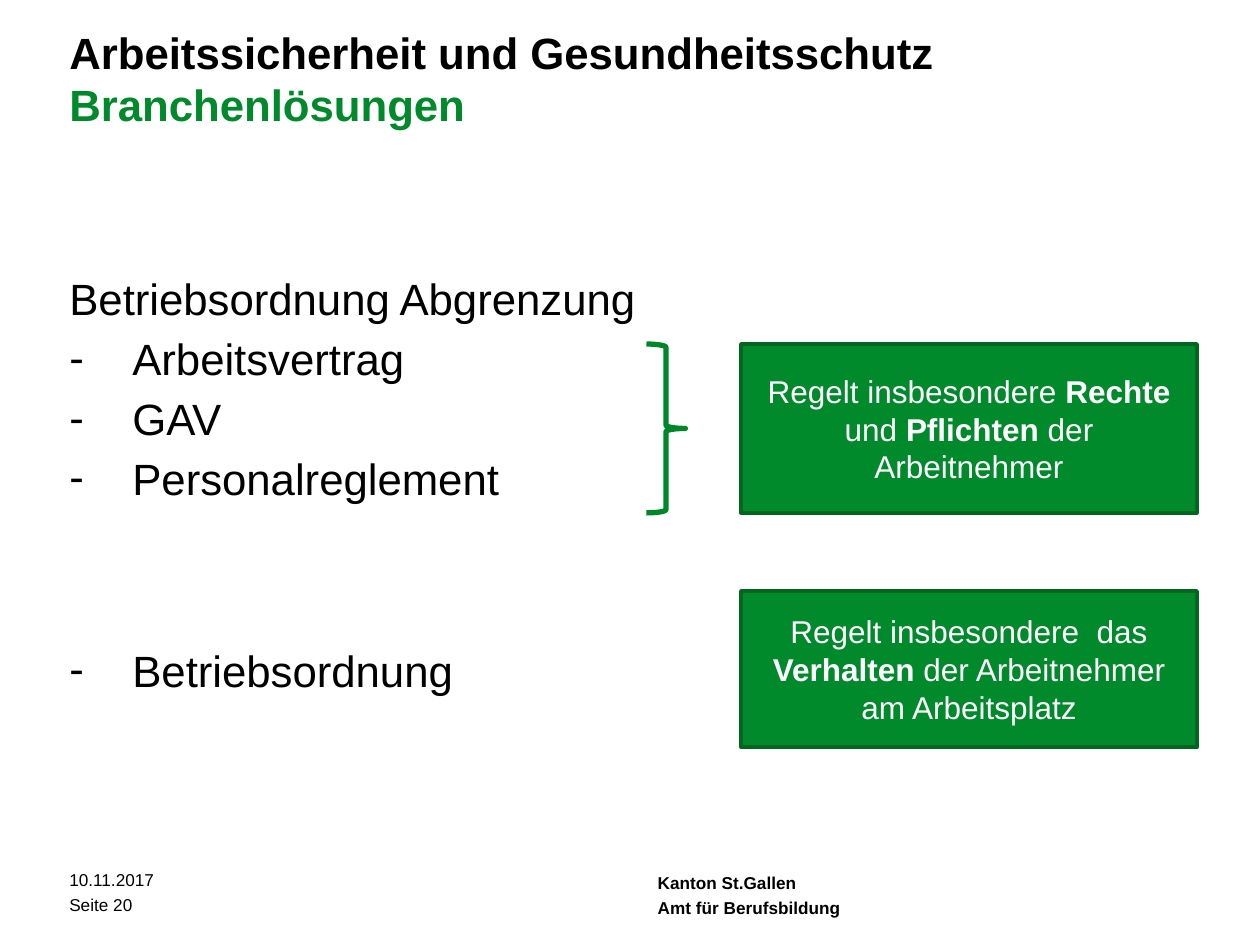
from pptx import Presentation
from pptx.util import Pt
from pptx.dml.color import RGBColor
from pptx.enum.shapes import MSO_SHAPE
from pptx.enum.text import MSO_ANCHOR, PP_ALIGN
from pptx.oxml.ns import qn
from lxml.etree import SubElement

COLORS = {"black": "000000", "white": "FFFFFF", "green": "008A2B",
          "brace": "00872A", "edge": "006620"}
FONT = "Arial"


def color(name):
    return RGBColor.from_string(COLORS[name])


def style(font, size, tone="black", bold=False):
    font.name = FONT
    font.size = Pt(size)
    font.bold = bold
    font.color.rgb = color(tone)


def add_text(slide, left, top, width, height):
    box = slide.shapes.add_textbox(Pt(left), Pt(top), Pt(width), Pt(height))
    frame = box.text_frame
    frame.word_wrap = True
    frame.margin_left = frame.margin_right = 0
    frame.margin_top = frame.margin_bottom = 0
    return frame


def add_title(slide, left, top, width, height):
    frame = add_text(slide, left, top, width, height)
    frame.text = "Arbeitssicherheit und Gesundheitsschutz\nBranchenlösungen"
    for para, tone in zip(frame.paragraphs, ("black", "green")):
        para.line_spacing = Pt(30)
        style(para.runs[0].font, 25, tone, True)


def add_dash(para, indent):
    props = para._p.get_or_add_pPr()
    props.set("marL", str(Pt(indent)))
    props.set("indent", str(-Pt(indent)))
    SubElement(props, qn("a:buFont")).set("typeface", FONT)
    SubElement(props, qn("a:buChar")).set("char", "-")


def add_list(slide, left, top, width, height):
    frame = add_text(slide, left, top, width, height)
    frame.text = "\n".join(("Betriebsordnung Abgrenzung", "Arbeitsvertrag", "GAV",
                            "Personalreglement", "Betriebsordnung"))
    for para in frame.paragraphs:
        para.line_spacing = Pt(30)
        para.space_after = Pt(4.2)
        style(para.runs[0].font, 25)
    for para in frame.paragraphs[1:]:
        add_dash(para, 36)
    frame.paragraphs[-1].space_before = Pt(75.5)


def add_brace(slide, left, top, width, height):
    brace = slide.shapes.add_shape(MSO_SHAPE.RIGHT_BRACE, Pt(left), Pt(top),
                                   Pt(width), Pt(height))
    brace.shadow.inherit = False
    brace.fill.background()
    brace.line.color.rgb = color("brace")
    brace.line.width = Pt(3)


def add_note(slide, left, top, width, height, parts):
    """Green box; every second part of its text is bold."""
    box = slide.shapes.add_shape(MSO_SHAPE.RECTANGLE, Pt(left), Pt(top),
                                 Pt(width), Pt(height))
    box.shadow.inherit = False
    box.fill.solid()
    box.fill.fore_color.rgb = color("green")
    box.line.color.rgb = color("edge")
    box.line.width = Pt(2)
    frame = box.text_frame
    frame.word_wrap = True
    frame.vertical_anchor = MSO_ANCHOR.MIDDLE
    para = frame.paragraphs[0]
    para.alignment = PP_ALIGN.CENTER
    for i, part in enumerate(parts):
        run = para.add_run()
        run.text = part
        style(run.font, 18, "white", i % 2 == 1)


def add_footer(slide, left, top, width, lines, bold=False):
    step = 14.4
    for i, line in enumerate(lines):
        frame = add_text(slide, left, top + i * step, width, 12)
        frame.text = line
        para = frame.paragraphs[0]
        para.line_spacing = Pt(11.9)
        style(para.runs[0].font, 9.8, bold=bold)


def main():
    deck = Presentation()
    deck.slide_width, deck.slide_height = Pt(720), Pt(540)
    slide = deck.slides.add_slide(deck.slide_layouts[6])
    left, note_left, note_width, row = 39.6, 423.4, 260.6, 196.6
    add_title(slide, left, 14.5, 660, 75.6)
    add_list(slide, left, 155.5, 660, 335)
    add_brace(slide, 369.4, row, 22.3, 96.5)
    add_note(slide, note_left, row, note_width, 96.5,
             ("Regelt insbesondere ", "Rechte", " und ", "Pflichten",
              " der Arbeitnehmer"))
    add_note(slide, note_left, 337.7, note_width, 89.3,
             ("Regelt insbesondere  das ", "Verhalten",
              " der Arbeitnehmer am Arbeitsplatz"))
    add_footer(slide, left, 496.8, 161.3, ("10.11.2017", "Seite 20"))
    add_footer(slide, 375.8, 498.2, 286.6,
               ("Kanton St.Gallen", "Amt für Berufsbildung"), True)
    deck.save("out.pptx")


if __name__ == "__main__":
    main()
